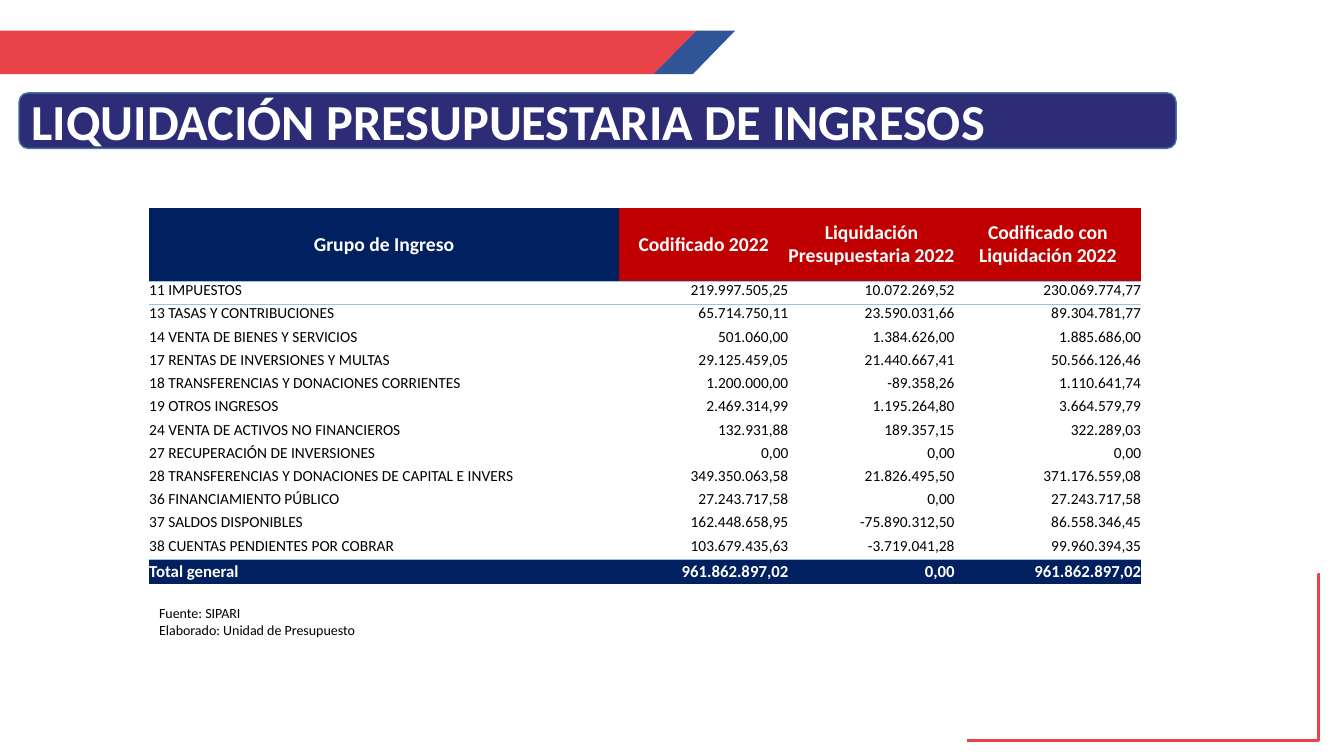
import pptx
import pptx.dml.color
import pptx.enum.shapes
import pptx.enum.text
import pptx.oxml
import pptx.oxml.ns
import pptx.util
from pptx.util import Cm

ALIGN = pptx.enum.text.PP_ALIGN
ANCHOR = pptx.enum.text.MSO_ANCHOR
RED, BLUE, NAVY, DARK_RED = "E94349", "2F5597", "002060", "C00000"
WHITE, BLACK, RULE = "FFFFFF", "000000", "9BC2E6"
NO_STYLE = "{2D5ABB26-0587-4C30-8999-92F81FD0307C}"

COLUMN_WIDTHS = [11.84, 4.27, 4.19, 4.7]
HEADERS = ["Grupo de Ingreso", "Codificado 2022", "Liquidación Presupuestaria 2022",
           "Codificado con Liquidación 2022"]
INCOME = [
    ["11 IMPUESTOS", "219.997.505,25", "10.072.269,52", "230.069.774,77"],
    ["13 TASAS Y CONTRIBUCIONES", "65.714.750,11", "23.590.031,66", "89.304.781,77"],
    ["14 VENTA DE BIENES Y SERVICIOS", "501.060,00", "1.384.626,00", "1.885.686,00"],
    ["17 RENTAS DE INVERSIONES Y MULTAS", "29.125.459,05", "21.440.667,41", "50.566.126,46"],
    ["18 TRANSFERENCIAS Y DONACIONES CORRIENTES", "1.200.000,00", "-89.358,26", "1.110.641,74"],
    ["19 OTROS INGRESOS", "2.469.314,99", "1.195.264,80", "3.664.579,79"],
    ["24 VENTA DE ACTIVOS NO FINANCIEROS", "132.931,88", "189.357,15", "322.289,03"],
    ["27 RECUPERACIÓN DE INVERSIONES", "0,00", "0,00", "0,00"],
    ["28 TRANSFERENCIAS Y DONACIONES DE CAPITAL E INVERS", "349.350.063,58", "21.826.495,50",
     "371.176.559,08"],
    ["36 FINANCIAMIENTO PÚBLICO", "27.243.717,58", "0,00", "27.243.717,58"],
    ["37 SALDOS DISPONIBLES", "162.448.658,95", "-75.890.312,50", "86.558.346,45"],
    ["38 CUENTAS PENDIENTES POR COBRAR", "103.679.435,63", "-3.719.041,28", "99.960.394,35"],
]
TOTAL = ["Total general", "961.862.897,02", "0,00", "961.862.897,02"]


def color(value):
    """Return the colour for a hex string."""
    return pptx.dml.color.RGBColor.from_string(value)


def write(frame, text, size=11, fill=BLACK, bold=False, align=ALIGN.LEFT):
    """Write text into a frame, one paragraph per line."""
    frame.word_wrap = True
    frame.text = text
    for paragraph in frame.paragraphs:
        paragraph.alignment = align
        font = paragraph.font
        font.name, font.size, font.bold = "Calibri", pptx.util.Pt(size), bold
        font.color.rgb = color(fill)


def add_band(slide, points, fill):
    """Draw a filled outline through points given in centimetres."""
    corners = [(Cm(x), Cm(y)) for x, y in points]
    builder = slide.shapes.build_freeform(*corners[0])
    builder.add_line_segments(corners[1:], close=True)
    shape = builder.convert_to_shape()
    shape.shadow.inherit = False
    shape.fill.solid()
    shape.fill.fore_color.rgb = color(fill)
    shape.line.fill.background()


def add_corner(slide):
    """Draw the bent line in the bottom right corner."""
    connector = slide.shapes.add_connector(pptx.enum.shapes.MSO_CONNECTOR.ELBOW,
                                           Cm(24.38), Cm(18.67), Cm(33.27), Cm(14.48))
    connector.line.color.rgb = color(RED)
    connector.line.width = pptx.util.Pt(2.25)
    properties = connector._element.spPr
    guides = properties.find(pptx.oxml.ns.qn("a:prstGeom")).get_or_add_avLst()
    guide = pptx.oxml.parse_xml(
        f'<a:gd {pptx.oxml.ns.nsdecls("a")} name="adj1" fmla="val 99600"/>')
    guides.append(guide)
    properties.append(pptx.oxml.parse_xml(f'<a:effectLst {pptx.oxml.ns.nsdecls("a")}/>'))


def add_title(slide, text):
    """Draw the title in its rounded bar."""
    shape = slide.shapes.add_shape(pptx.enum.shapes.MSO_SHAPE.FLOWCHART_ALTERNATE_PROCESS,
                                   Cm(0.48), Cm(2.34), Cm(29.16), Cm(1.4))
    shape.shadow.inherit = False
    shape.fill.solid()
    shape.fill.fore_color.rgb = color("2C2D76")
    shape.line.color.rgb = color("43739E")
    shape.line.width = pptx.util.Pt(1)
    shape.text_frame.vertical_anchor = ANCHOR.MIDDLE
    write(shape.text_frame, text, size=36, fill=WHITE, bold=True)


def add_rule(cell, side):
    """Draw a thin rule on the top (T) or bottom (B) of a cell."""
    cell._tc.get_or_add_tcPr().insert(0, pptx.oxml.parse_xml(
        f'<a:ln{side} {pptx.oxml.ns.nsdecls("a")} w="6350"><a:solidFill>'
        f'<a:srgbClr val="{RULE}"/></a:solidFill></a:ln{side}>'))


def fill_cell(cell, text, background=None, anchor=ANCHOR.TOP, **text_format):
    """Fill one table cell without margins."""
    cell.margin_left = cell.margin_right = cell.margin_top = cell.margin_bottom = 0
    cell.vertical_anchor = anchor
    if background:
        cell.fill.solid()
        cell.fill.fore_color.rgb = color(background)
    else:
        cell.fill.background()
    write(cell.text_frame, text, **text_format)


def add_income_table(slide):
    """Draw the table of income groups with its header and total."""
    heights = [Cm(1.85)] + [Cm(7.02) // len(INCOME)] * len(INCOME) + [Cm(0.62)]
    last = len(heights) - 1
    table = slide.shapes.add_table(len(heights), len(HEADERS), Cm(3.76), Cm(5.23),
                                   Cm(sum(COLUMN_WIDTHS)), sum(heights)).table
    table.first_row = table.horz_banding = False
    table._tbl.tblPr.find(pptx.oxml.ns.qn("a:tableStyleId")).text = NO_STYLE
    for column, width in zip(table.columns, COLUMN_WIDTHS):
        column.width = Cm(width)
    for row, height in zip(table.rows, heights):
        row.height = height
    for row, texts in enumerate([HEADERS, *INCOME, TOTAL]):
        for column, text in enumerate(texts):
            cell = table.cell(row, column)
            align = ALIGN.RIGHT if column else ALIGN.LEFT
            if row == 0:
                fill_cell(cell, text, DARK_RED if column else NAVY, ANCHOR.MIDDLE,
                          size=14, fill=WHITE, bold=True, align=ALIGN.CENTER)
            elif row == last:
                fill_cell(cell, text, NAVY, ANCHOR.MIDDLE,
                          size=12, fill=WHITE, bold=True, align=align)
            else:
                fill_cell(cell, text, align=align)
            if row in (0, last - 1):
                add_rule(cell, "B")
            if row in (1, last):
                add_rule(cell, "T")


def add_source(slide, text):
    """Write the source note below the table."""
    box = slide.shapes.add_textbox(Cm(3.76), Cm(15.11), Cm(8.99), Cm(1.12))
    write(box.text_frame, text, size=10)


def main():
    """Build the slide and save it."""
    presentation = pptx.Presentation()
    presentation.slide_width, presentation.slide_height = Cm(33.87), Cm(19.05)
    slide = presentation.slides.add_slide(presentation.slide_layouts[6])
    add_band(slide, [(0, 0.77), (17.57, 0.77), (16.47, 1.87), (0, 1.87)], RED)
    add_band(slide, [(17.56, 0.77), (18.53, 0.77), (17.46, 1.87), (16.47, 1.87)], BLUE)
    add_corner(slide)
    add_title(slide, "LIQUIDACIÓN PRESUPUESTARIA DE INGRESOS")
    add_source(slide, "Fuente: SIPARI\nElaborado: Unidad de Presupuesto")
    add_income_table(slide)
    presentation.save("out.pptx")


if __name__ == "__main__":
    main()
